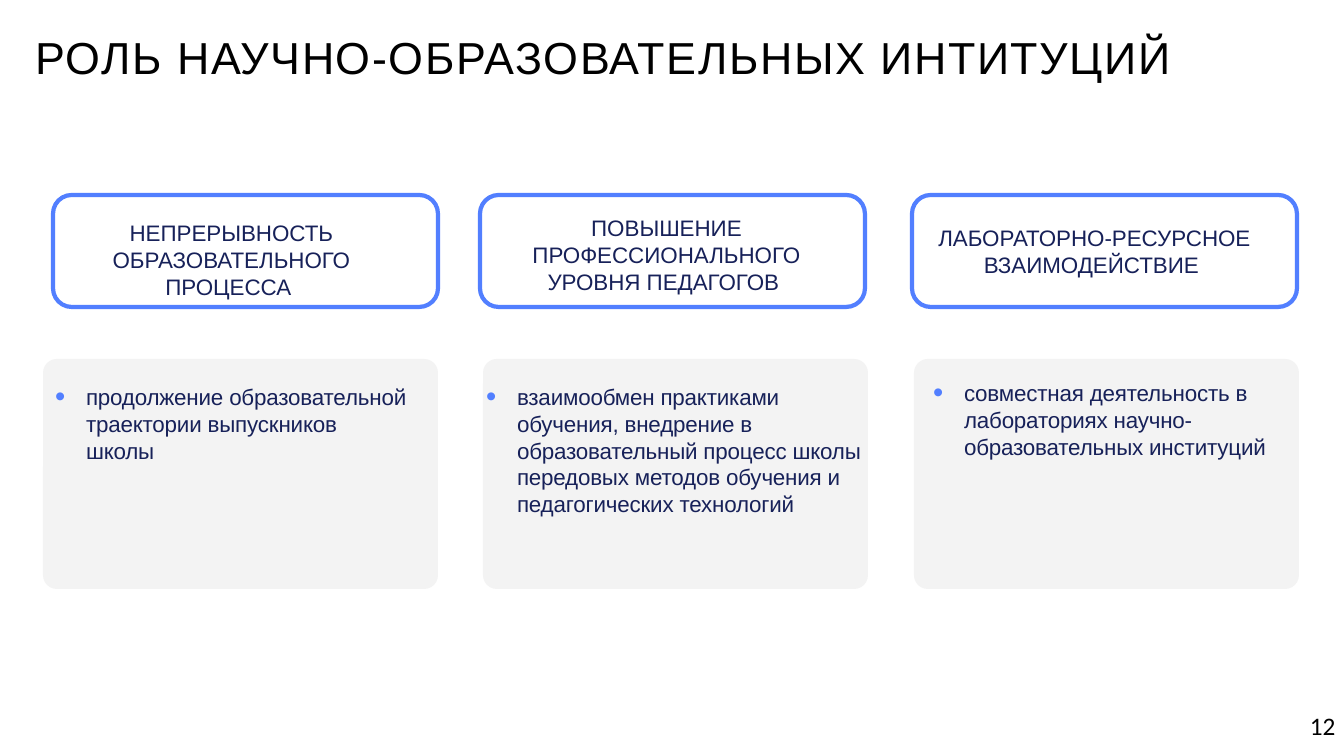
from lxml import etree
from pptx import Presentation
from pptx.dml.color import RGBColor
from pptx.enum.shapes import MSO_SHAPE
from pptx.enum.text import MSO_ANCHOR, MSO_AUTO_SIZE, PP_ALIGN
from pptx.oxml.ns import qn
from pptx.util import Pt

TITLE = "РОЛЬ НАУЧНО-ОБРАЗОВАТЕЛЬНЫХ ИНТИТУЦИЙ"
PAGE = "12"
HEADERS = [
    ("НЕПРЕРЫВНОСТЬ ОБРАЗОВАТЕЛЬНОГО ПРОЦЕССА ", 53, (74, 218, 315, 83)),
    ("ПОВЫШЕНИЕ ПРОФЕССИОНАЛЬНОГО УРОВНЯ ПЕДАГОГОВ ", 480, (504, 213, 325, 83)),
    ("ЛАБОРАТОРНО-РЕСУРСНОЕ ВЗАИМОДЕЙСТВИЕ ", 912, (934, 223, 321, 55)),
]
DETAILS = [
    ("продолжение образовательной траектории выпускников школы",
     (43, 395), (53, 382, 355, 83)),
    ("взаимообмен практиками обучения, внедрение в образовательный процесс школы "
     "передовых методов обучения и педагогических технологий",
     (483, 385), (484, 382, 385, 137)),
    ("совместная деятельность в лабораториях научно-образовательных институций",
     (914, 385), (931, 378, 368, 83)),
]
HEADER_TOP, HEADER_W, HEADER_H = 195, 385, 112
PANEL_TOP, PANEL_H = 359, 230

BLUE = RGBColor(0x52, 0x7F, 0xFF)
NAVY = RGBColor(0x17, 0x21, 0x59)
GRAY = RGBColor(0xF3, 0xF3, 0xF3)
BLACK = RGBColor(0, 0, 0)
ROUNDED = MSO_SHAPE.ROUNDED_RECTANGLE
TOP = MSO_ANCHOR.TOP
NO_AUTOSIZE = MSO_AUTO_SIZE.NONE
LEFT, CENTER = PP_ALIGN.LEFT, PP_ALIGN.CENTER
EMU_PER_PX = 914400 / 100.8


def px(n):
    return round(n * EMU_PER_PX)


def place(sp, box):
    sp.left, sp.top, sp.width, sp.height = map(px, box)


def rounded(s, box):
    sp = s.shapes.add_shape(ROUNDED, *map(px, box))
    sp.shadow.inherit = False
    return sp


def write(sp, text, size, color, font="Arial", align=LEFT, spacing=0, margins=None):
    tf = sp.text_frame
    tf.word_wrap = True
    tf.auto_size = NO_AUTOSIZE
    tf.vertical_anchor = TOP
    if margins:
        tf.margin_left, tf.margin_top, tf.margin_right, tf.margin_bottom = map(px, margins)
    p = tf.paragraphs[0]
    p.alignment = align
    r = p.add_run()
    r.text = text
    r.font.size = Pt(size)
    r.font.name = font
    r.font.color.rgb = color
    if spacing:
        r.font._element.set("spc", str(spacing))
    return p


def add_bullet(p):
    pPr = p._p.get_or_add_pPr()
    pPr.set("marL", str(px(33)))
    pPr.set("indent", str(-px(31)))
    color = etree.SubElement(pPr, qn("a:buClr"))
    etree.SubElement(color, qn("a:srgbClr"), val=str(BLUE))
    etree.SubElement(pPr, qn("a:buSzPct"), val="130000")
    etree.SubElement(pPr, qn("a:buFont"), typeface="Arial")
    etree.SubElement(pPr, qn("a:buChar"), char="•")


def main():
    prs = Presentation()
    prs.slide_width, prs.slide_height = px(1344), px(756)
    s = prs.slides.add_slide(prs.slide_layouts[5])

    title = s.shapes.title
    place(title, (25, 25, 1257, 65))
    write(title, TITLE, 32, BLACK, spacing=110)

    for text, left, text_box in HEADERS:
        frame = rounded(s, (left, HEADER_TOP, HEADER_W, HEADER_H))
        frame.fill.background()
        frame.line.color.rgb = BLUE
        frame.line.width = Pt(3)
        label = s.shapes.add_textbox(*map(px, text_box))
        p = write(label, text, 16, NAVY, align=CENTER, margins=(0, 1, 0, 0))
        p.space_before = Pt(1)

    for text, (left, width), text_box in DETAILS:
        panel = rounded(s, (left, PANEL_TOP, width, PANEL_H))
        panel.adjustments[0] = 0.06
        panel.fill.solid()
        panel.fill.fore_color.rgb = GRAY
        panel.line.fill.background()
        detail = s.shapes.add_textbox(*map(px, text_box))
        add_bullet(write(detail, text, 16, NAVY, spacing=-10, margins=(0, 1, 0, 0)))

    number = s.shapes.add_textbox(*map(px, (1300, 705, 44, 40)))
    write(number, PAGE, 18, BLACK, font="Calibri", margins=(10, 5, 0, 5))

    prs.save("out.pptx")


if __name__ == "__main__":
    main()
